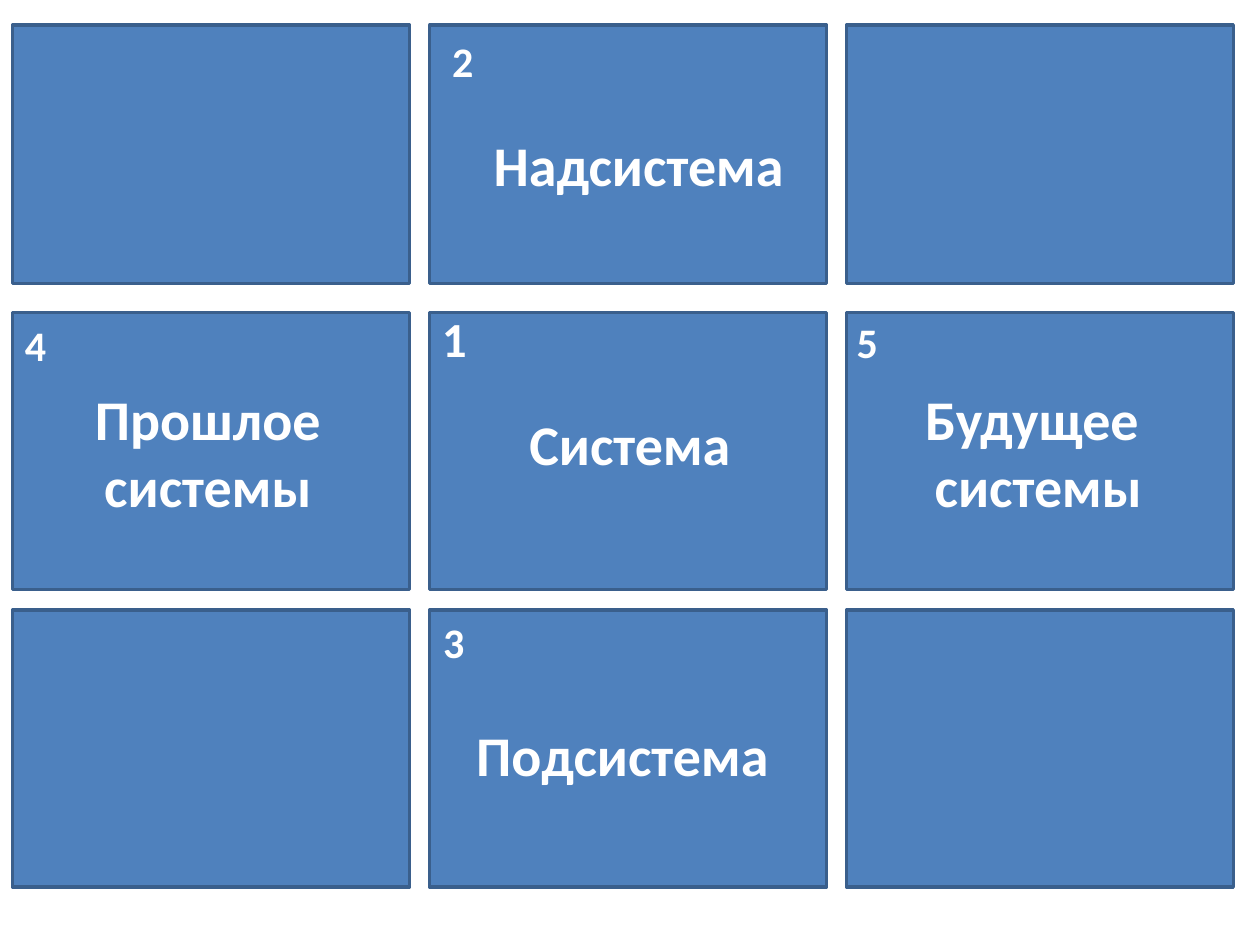
import pptx
import pptx.util
import pptx.dml.color
import pptx.enum.shapes
import pptx.enum.text

Pt = pptx.util.Pt
ALIGN = pptx.enum.text.PP_ALIGN
LEFTS, WIDTHS = (7.2, 245.5, 483.8), (226.8, 226.8, 221)
TOPS, HEIGHTS = (14.4, 178.6, 348.5), (147.6, 158.4, 158.4)


def color(code):
    """Turn a hex string into a colour."""
    return pptx.dml.color.RGBColor.from_string(code)


def draw_cell(group, box):
    """Draw one blue cell that fills the box."""
    rect = pptx.enum.shapes.MSO_SHAPE.RECTANGLE
    cell = group.shapes.add_shape(rect, *map(Pt, box))
    cell.shadow.inherit = False
    cell.fill.solid()
    cell.fill.fore_color.rgb = color("4F81BD")
    cell.line.color.rgb = color("3A5F8C")
    cell.line.width = Pt(2)


def add_label(slide, box, lines, size, align):
    """Write bold white lines in the box."""
    frame = slide.shapes.add_textbox(*map(Pt, box)).text_frame
    frame.word_wrap = True
    frame.auto_size = pptx.enum.text.MSO_AUTO_SIZE.SHAPE_TO_FIT_TEXT
    frame.text = "\n".join(lines)
    for para in frame.paragraphs:
        para.alignment = align
        para.font.name = "Calibri"
        para.font.size = Pt(size)
        para.font.bold = True
        para.font.color.rgb = color("FFFFFF")


def fill_cell(slide, box, name, number):
    """Place the name and the number of a cell relative to its box."""
    left, top = box[:2]
    lines, align, (dx, dy, width) = name
    high = 46 if len(lines) == 1 else 85
    add_label(slide, (left + dx, top + dy, width, high), lines, 32, align)
    text, size, (dx, dy, width) = number
    spot = (left + dx, top + dy, width, size * 1.2 + 7.2)
    add_label(slide, spot, [text], size, ALIGN.LEFT)


def draw_grid(slide, labels):
    """Draw the nine cells, then fill those that have labels."""
    boxes = {(row, col): (LEFTS[col], TOPS[row], WIDTHS[col], HEIGHTS[row])
             for row in range(3) for col in range(3)}
    group = slide.shapes.add_group_shape()
    for box in boxes.values():
        draw_cell(group, box)
    for place, (name, number) in labels.items():
        fill_cell(slide, boxes[place], name, number)


def main():
    """Build the slide and save it."""
    deck = pptx.Presentation()
    deck.slide_width, deck.slide_height = Pt(720), Pt(540)
    slide = deck.slides.add_slide(deck.slide_layouts[6])
    mid = ALIGN.CENTER
    draw_grid(slide, {
        (1, 1): ((["Система"], mid, (29.5, 51.8, 170)),
                 ("1", 28, (0, -5.8, 45.4))),
        (0, 1): ((["Надсистема"], ALIGN.LEFT, (29.5, 56.9, 187.2)),
                 ("2", 24, (5.8, 2.2, 22.3))),
        (2, 1): ((["Подсистема"], mid, (16.6, 59.8, 187.2)),
                 ("3", 24, (0.7, 0, 32.4))),
        (1, 0): ((["Прошлое", "системы"], mid, (26.6, 37.4, 170)),
                 ("4", 24, (0, 0.7, 26.6))),
        (1, 2): ((["Будущее", " системы"], mid, (23.8, 37.4, 164.2)),
                 ("5", 24, (-1.4, -1.4, 35.3))),
    })
    deck.save("out.pptx")


if __name__ == "__main__":
    main()
